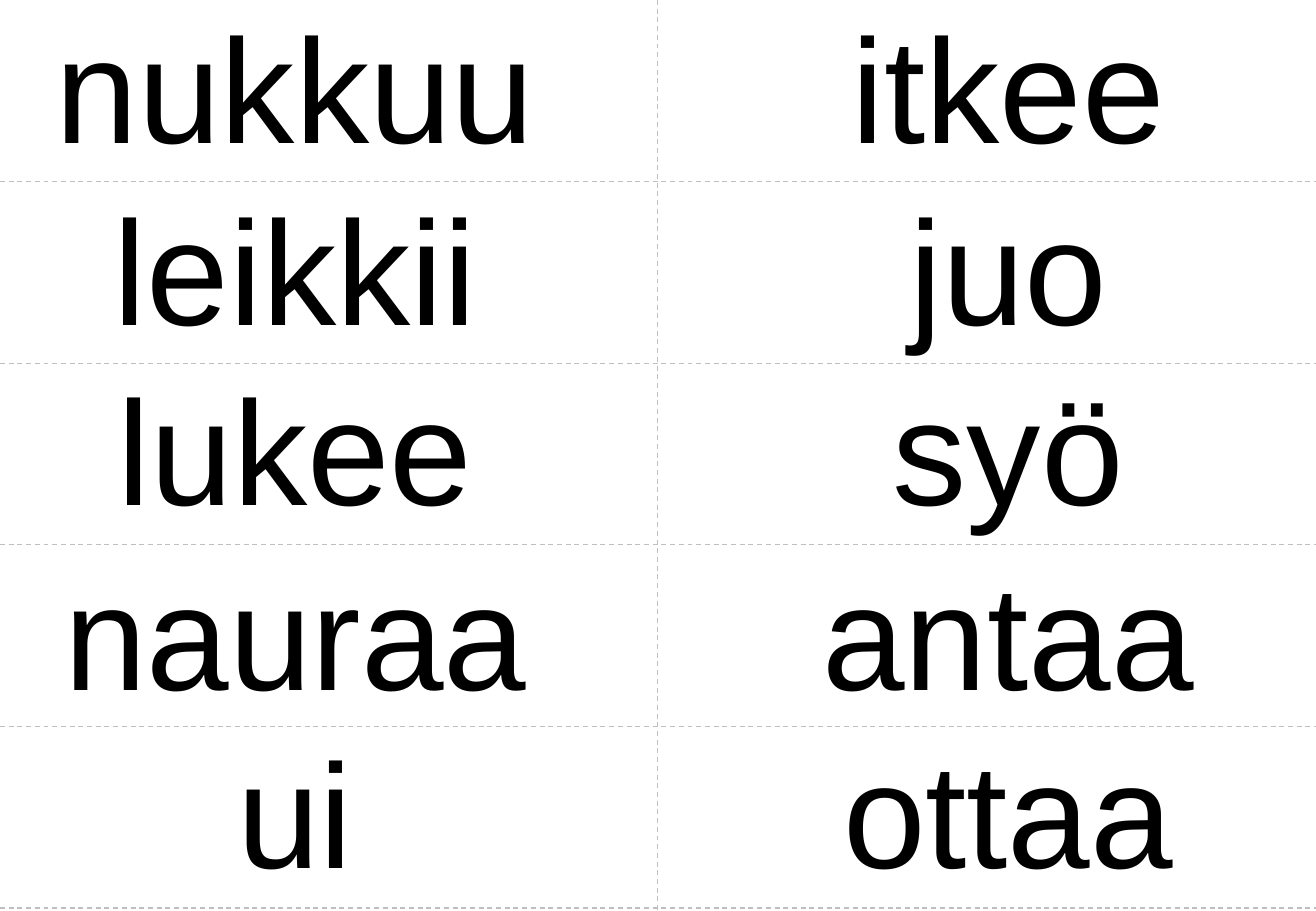
from dataclasses import dataclass

from lxml import etree
from pptx import Presentation
from pptx.dml.color import RGBColor
from pptx.enum.dml import MSO_LINE
from pptx.enum.shapes import MSO_CONNECTOR
from pptx.enum.text import MSO_AUTO_SIZE, PP_ALIGN
from pptx.oxml.ns import qn
from pptx.util import Pt

PX = 4572  # 200 px to the inch
DASH = MSO_LINE.DASH
STRAIGHT = MSO_CONNECTOR.STRAIGHT
CENTER = PP_ALIGN.CENTER
GROW = MSO_AUTO_SIZE.SHAPE_TO_FIT_TEXT

WIDTH, HEIGHT = 2167, 1500
HALF = WIDTH // 2
ROW = 299
TALL = 296
INSET = 10
LIFTS = (18, 17, 20, 15, 20)

# Each column: centre within its box, then words with their widths
LEFT = (486, (("nukkuu", 812), ("leikkii", 620), ("lukee", 608),
              ("nauraa", 784), ("ui", 214)))
RIGHT = (577, (("itkee", 540), ("juo", 348), ("syö", 404),
               ("antaa", 634), ("ottaa", 566)))


@dataclass(frozen=True)
class Theme:
    font: str = "Arial"
    size: int = 88
    ink: RGBColor = RGBColor(0, 0, 0)
    rule: RGBColor = RGBColor(0xBF, 0xBF, 0xBF)
    line: float = 0.75


THEME = Theme()


def px(*nums):
    return [num * PX for num in nums]


def add_word(slide, box, word):
    frame = slide.shapes.add_textbox(*px(*box)).text_frame
    frame.word_wrap = False
    frame.auto_size = GROW
    frame.margin_left = frame.margin_right = INSET * PX
    frame.margin_top = frame.margin_bottom = INSET * PX
    para = frame.paragraphs[0]
    para.alignment = CENTER
    run = para.add_run()
    run.text = word
    run.font.name = THEME.font
    run.font.size = Pt(THEME.size)
    run.font.color.rgb = THEME.ink


def add_column(slide, box, column):
    left, top, _, height = box
    middle, words = column
    pitch = height // len(words)
    for row, ((word, width), lift) in enumerate(zip(words, LIFTS)):
        spot = (left + middle - width // 2, top + row * pitch - lift,
                width, TALL)
        add_word(slide, spot, word)


def add_cut(slide, *ends):
    """Draw one dashed cutting line."""
    cut = slide.shapes.add_connector(STRAIGHT, *px(*ends))
    cut.line.color.rgb = THEME.rule
    cut.line.width = Pt(THEME.line)
    cut.line.dash_style = DASH
    etree.SubElement(cut._element.spPr, qn("a:effectLst"))


def add_grid(slide, box, rows):
    left, top, width, height = box
    middle = left + width // 2
    add_cut(slide, middle, top, middle, top + height)
    for row in range(1, rows + 1):
        y = top + row * ROW
        add_cut(slide, left, y, left + width, y)


def main():
    deck = Presentation()
    deck.slide_width, deck.slide_height = px(WIDTH, HEIGHT)
    slide = deck.slides.add_slide(deck.slide_layouts[6])
    rows = len(LIFTS)
    for left, column in ((0, LEFT), (HALF, RIGHT)):
        add_column(slide, (left, 0, HALF, rows * ROW), column)
    add_grid(slide, (0, 0, WIDTH, HEIGHT), rows)
    deck.save("out.pptx")


if __name__ == "__main__":
    main()
